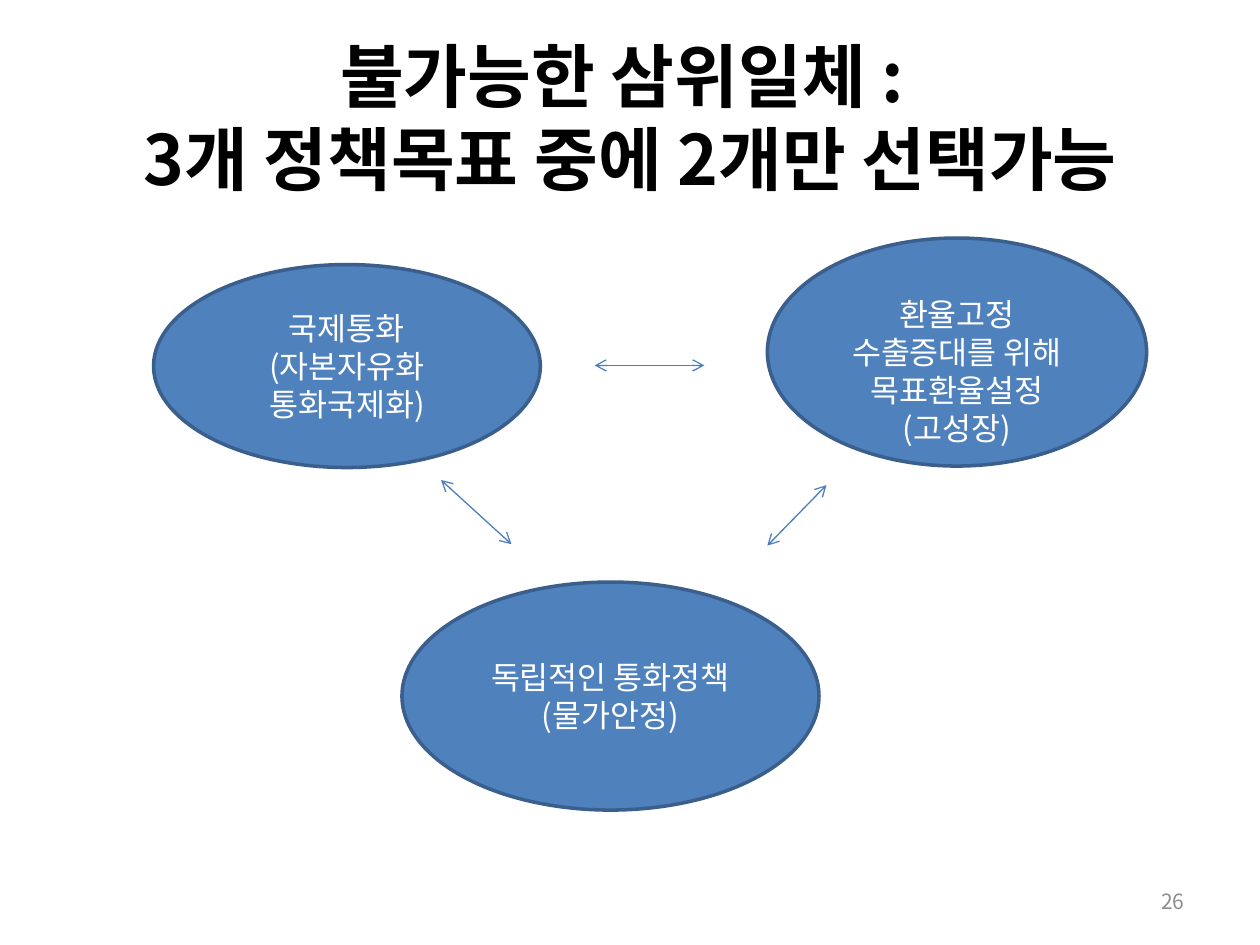
from lxml import etree
from pptx import Presentation
from pptx.dml.color import RGBColor
from pptx.enum import shapes, text
from pptx.oxml import ns
from pptx.util import Pt

FONT = "Noto Sans CJK KR"
BLACK = RGBColor(0x00, 0x00, 0x00)
WHITE = RGBColor(0xFF, 0xFF, 0xFF)
GREY = RGBColor(0x8C, 0x8C, 0x8C)
BLUE = RGBColor(0x4F, 0x81, 0xBD)
OUTLINE_BLUE = RGBColor(0x3A, 0x5F, 0x8C)
ARROW_BLUE = RGBColor(0x4B, 0x7E, 0xBC)

LINE_HEIGHT = 21.7
INSET = 3.6

# Goal text, box (left, top, width, height), extra inset above the text
GOALS = [
    ("국제통화\n(자본자유화\n통화국제화)", (87.8, 151.2, 221, 116), 0),
    ("환율고정\n수출증대를 위해 목표환율설정\n(고성장)", (438.5, 136, 216.7, 130.3), LINE_HEIGHT),
    ("독립적인 통화정책(물가안정)", (229.7, 332.6, 238.3, 130.3), 0),
]
# Start and end of each arrow between two goals
ARROWS = [
    ((339.8, 208.8), (402.5, 208.8)),
    ((252, 274.3), (292.3, 311)),
    ((472.3, 277.2), (438.5, 311.8)),
]


def place(shape, box):
    shape.left, shape.top, shape.width, shape.height = map(Pt, box)


def write(shape, content, size, color, alignment, bold=False):
    frame = shape.text_frame
    frame.text = content
    frame.word_wrap = True
    frame.auto_size = text.MSO_AUTO_SIZE.NONE
    frame.vertical_anchor = text.MSO_ANCHOR.MIDDLE
    for paragraph in frame.paragraphs:
        paragraph.alignment = alignment
        for run in paragraph.runs:
            run.font.size = Pt(size)
            run.font.bold = bold
            run.font.name = FONT
            run.font.color.rgb = color
            east_asian = etree.Element(ns.qn("a:ea"), typeface=FONT)
            run.font._element.find(ns.qn("a:latin")).addnext(east_asian)


def add_title(slide, box):
    title = slide.shapes.title
    place(title, box)
    write(title, "불가능한 삼위일체 : \v3개 정책목표 중에 2개만 선택가능",
          39.6, BLACK, text.PP_ALIGN.CENTER, bold=True)


def add_goal(slide, content, box, extra_inset):
    goal = slide.shapes.add_shape(shapes.MSO_SHAPE.OVAL, *map(Pt, box))
    goal.shadow.inherit = False
    goal.fill.solid()
    goal.fill.fore_color.rgb = BLUE
    goal.line.color.rgb = OUTLINE_BLUE
    goal.line.width = Pt(2)
    goal.text_frame.margin_top = Pt(INSET + extra_inset)
    write(goal, content, 18, WHITE, text.PP_ALIGN.CENTER)


def add_double_arrow(slide, start, end):
    arrow = slide.shapes.add_connector(
        shapes.MSO_CONNECTOR.STRAIGHT, *map(Pt, start + end))
    arrow.line.color.rgb = ARROW_BLUE
    arrow.line.width = Pt(0.75)
    line = arrow.line._get_or_add_ln()
    for tag in ("a:headEnd", "a:tailEnd"):
        etree.SubElement(line, ns.qn(tag), type="arrow")
    etree.SubElement(arrow._element.spPr, ns.qn("a:effectLst"))


def add_page_number(slide, box):
    number = slide.shapes.add_textbox(*map(Pt, box))
    write(number, "26", 12, GREY, text.PP_ALIGN.RIGHT)


def main():
    presentation = Presentation()
    presentation.slide_width, presentation.slide_height = Pt(720), Pt(540)
    slide = presentation.slides.add_slide(presentation.slide_layouts[5])
    add_title(slide, (36, 21.6, 648, 90))
    add_page_number(slide, (516, 500.5, 168, 28.8))
    for content, box, extra_inset in GOALS:
        add_goal(slide, content, box, extra_inset)
    for start, end in ARROWS:
        add_double_arrow(slide, start, end)
    presentation.save("out.pptx")


if __name__ == "__main__":
    main()
